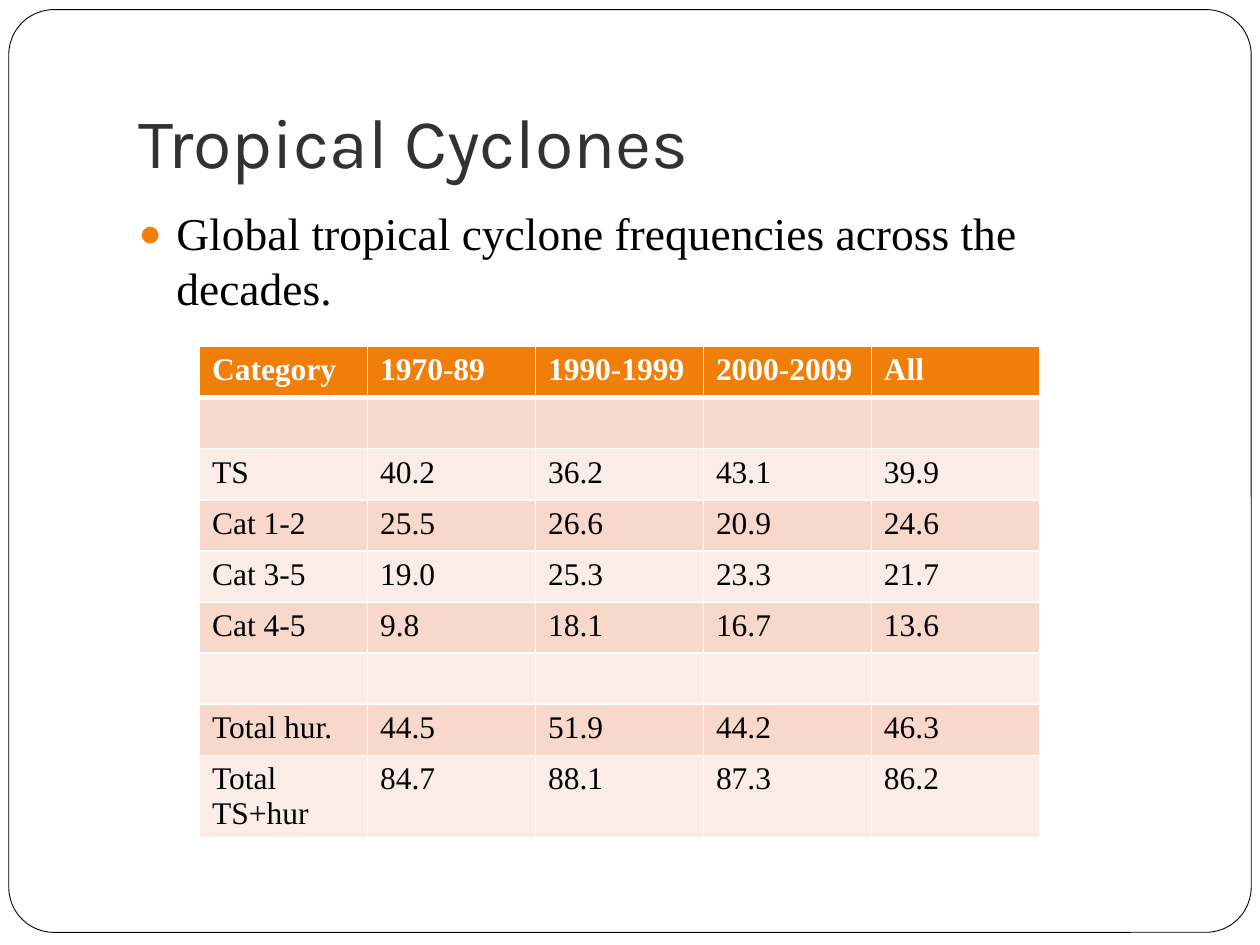
from lxml import etree
from pptx import Presentation
from pptx.dml.color import RGBColor
from pptx.enum.shapes import MSO_SHAPE
from pptx.enum.text import MSO_ANCHOR, MSO_AUTO_SIZE, PP_ALIGN
from pptx.oxml.ns import qn
from pptx.util import Pt

ROUND = MSO_SHAPE.ROUNDED_RECTANGLE
BOTTOM = MSO_ANCHOR.BOTTOM
TOP = MSO_ANCHOR.TOP
LEFT = PP_ALIGN.LEFT
FIXED = MSO_AUTO_SIZE.NONE

SERIF = "Times New Roman"
ORANGE = "F07F09"
BANDS = ("F9D8CC", "FCECE7")
WHITE = "FFFFFF"
BLACK = "000000"

ROWS = [
    ("Category", "1970-89", "1990-1999", "2000-2009", "All"),
    ("",) * 5,
    ("TS", "40.2", "36.2", "43.1", "39.9"),
    ("Cat 1-2", "25.5", "26.6", "20.9", "24.6"),
    ("Cat 3-5", "19.0", "25.3", "23.3", "21.7"),
    ("Cat 4-5", "9.8", "18.1", "16.7", "13.6"),
    ("",) * 5,
    ("Total hur.", "44.5", "51.9", "44.2", "46.3"),
    ("Total TS+hur", "84.7", "88.1", "87.3", "86.2"),
]


def color(code):
    return RGBColor.from_string(code)


def style(para, size, face, code, bold=False):
    for run in para.runs:
        font = run.font
        font.size, font.name, font.bold = Pt(size), face, bold
        font.color.rgb = color(code)


def place(shape, left, top, width, height):
    shape.left, shape.top = Pt(left), Pt(top)
    shape.width, shape.height = Pt(width), Pt(height)


def add_frame(slide):
    frame = slide.shapes.add_shape(ROUND, Pt(5), Pt(5.5), Pt(710), Pt(527.3))
    frame.adjustments[0] = 0.049
    frame.shadow.inherit = False
    frame.fill.solid()
    frame.fill.fore_color.rgb = color(WHITE)
    frame.line.color.rgb = color(BLACK)
    frame.line.width = Pt(0.5)
    # Send the frame behind the placeholders
    tree = slide.shapes._spTree
    tree.remove(frame._element)
    tree.insert(2, frame._element)


def fill_holder(shape, text, anchor):
    frame = shape.text_frame
    frame.text = text
    frame.word_wrap = True
    frame.auto_size = FIXED
    frame.vertical_anchor = anchor
    para = frame.paragraphs[0]
    para.alignment = LEFT
    return para


def add_bullet(para, code):
    props = para._p.get_or_add_pPr()
    props.set("marL", str(Pt(21.6)))
    props.set("indent", str(-Pt(21.6)))
    tint = etree.SubElement(props, qn("a:buClr"))
    etree.SubElement(tint, qn("a:srgbClr"), val=code)
    etree.SubElement(props, qn("a:buSzPct"), val="85000")
    etree.SubElement(props, qn("a:buChar"), char="●")


def add_edge(cell, side, width):
    props = cell._tc.get_or_add_tcPr()
    line = etree.SubElement(props, qn("a:ln" + side), w=str(Pt(width)))
    fill = etree.SubElement(line, qn("a:solidFill"))
    etree.SubElement(fill, qn("a:srgbClr"), val=WHITE)


def fill_cell(cell, text, row):
    head = row == 0
    # Borders go before the fill; the header rule is thicker
    widths = {"L": 1, "R": 1, "T": 3 if row == 1 else 1, "B": 3 if head else 1}
    for side, width in widths.items():
        add_edge(cell, side, width)
    cell.fill.solid()
    cell.fill.fore_color.rgb = color(ORANGE if head else BANDS[(row - 1) % 2])
    if text:
        cell.text_frame.text = text
        para = cell.text_frame.paragraphs[0]
        style(para, 18, SERIF, WHITE if head else BLACK, head)


def add_grid(slide):
    count, cols = len(ROWS), len(ROWS[0])
    shape = slide.shapes.add_table(
        count, cols, Pt(114), Pt(198), Pt(480), Pt(29.2 * count))
    table = shape.table
    for col in table.columns:
        col.width = Pt(96)
    for row, texts in enumerate(ROWS):
        table.rows[row].height = Pt(29.2)
        for col, text in enumerate(texts):
            fill_cell(table.cell(row, col), text, row)
    # The two-line label needs a taller last row
    table.rows[count - 1].height = Pt(46.8)


def main():
    deck = Presentation()
    deck.slide_width, deck.slide_height = Pt(720), Pt(540)
    slide = deck.slides.add_slide(deck.slide_layouts[1])
    add_frame(slide)

    # Title
    title = slide.shapes.title
    place(title, 72, 21.6, 612, 90)
    para = fill_holder(title, "Tropical Cyclones", BOTTOM)
    title.text_frame.margin_bottom = Pt(7.2)
    style(para, 40, "Karla", "323232")

    # Bulleted text
    body = slide.placeholders[1]
    place(body, 72, 113.8, 612, 360)
    text = "Global tropical cyclone frequencies across the decades."
    para = fill_holder(body, text, TOP)
    para.space_before = Pt(5.8)
    add_bullet(para, ORANGE)
    style(para, 26, SERIF, BLACK)

    # Frequency table
    add_grid(slide)
    deck.save("out.pptx")


if __name__ == "__main__":
    main()
